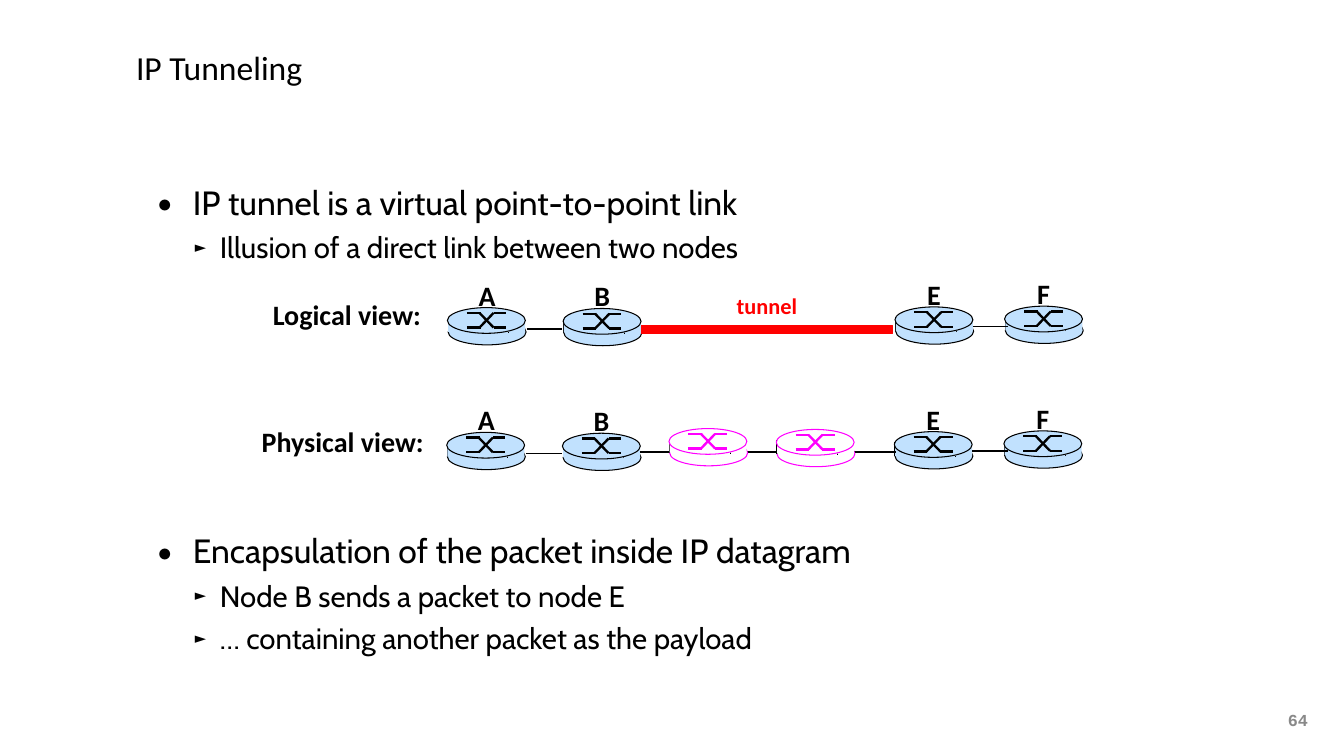
from dataclasses import dataclass
from typing import NamedTuple

from lxml.etree import SubElement
from pptx import Presentation
from pptx.dml.color import RGBColor
from pptx.enum.shapes import MSO_CONNECTOR, MSO_SHAPE
from pptx.enum.text import MSO_ANCHOR, MSO_AUTO_SIZE, PP_ALIGN
from pptx.oxml.ns import qn
from pptx.shapes.shapetree import GroupShapes, SlideShapes
from pptx.slide import Slide
from pptx.text.text import TextFrame, _Paragraph
from pptx.util import Pt

COLOURS = {
    "black": "000000",
    "blue": "C1E1FE",
    "white": "FFFFFF",
    "magenta": "FF00FF",
    "red": "FF0000",
    "grey": "898989",
}
Shapes = SlideShapes | GroupShapes
DISC_WIDTH, DISC_HEIGHT = 74.2, 24.5
ARROWS = (
    (18.5, 5, 31.5, 5),
    (44, 19, 55.5, 19),
    (30.5, 5, 44, 19),
    (18.5, 19, 31.5, 19),
    (44, 5, 55.5, 5),
    (30.5, 19, 44, 5),
)


class Box(NamedTuple):
    left: float
    top: float
    width: float
    height: float


class Link(NamedTuple):
    start: float
    end: float
    y: float


class View(NamedTuple):
    dx: float
    dy: float


@dataclass(frozen=True)
class Router:
    x: float
    y: float
    name: str = ""
    fill: str = "blue"
    outline: str = "black"


@dataclass(frozen=True)
class Bullet:
    text: str
    level: int = 0
    space_before: float = 7


@dataclass(frozen=True)
class BulletStyle:
    size: float
    margin: float
    indent: float
    mark: str
    percent: int


@dataclass(frozen=True)
class Caption:
    text: str
    box: Box
    size: float = 26.7
    colour: str = "black"
    font: str = "Calibri"
    inset: bool = True


BULLET_STYLES = (
    BulletStyle(32, 58.3, -33.1, "•", 150),
    BulletStyle(28, 84.2, -23.8, "►", 50),
)
BULLETS = (
    Bullet("IP tunnel is a virtual point-to-point link"),
    Bullet("Illusion of a direct link between two nodes", 1),
    Bullet("Encapsulation of the packet inside IP datagram", 0, 253),
    Bullet("Node B sends a packet to node E", 1),
    Bullet("… containing another packet as the payload", 1),
)
END_ROUTERS = (
    Router(426.2, 293, "A"),
    Router(536.4, 293.8, "B"),
    Router(852.5, 292.3, "E"),
    Router(956.9, 291.6, "F"),
)
TRANSIT_ROUTERS = (
    Router(637.2, 408.2, fill="white", outline="magenta"),
    Router(739.4, 409, fill="white", outline="magenta"),
)
OUTER_LINKS = (Link(501.8, 535.7, 313.2), Link(926.6, 960.5, 311))
TRANSIT_LINK = Link(609.8, 853.9, 430.6)
VIEWS = (View(0, 0), View(-0.7, 118.8))
TUNNEL = Box(610.6, 310.3, 239.8, 7.2)
CAPTIONS = (
    Caption("tunnel", Box(694.1, 274.3, 72.7, 33.1), 21.3, "red"),
    Caption("Logical view:", Box(252, 279.4, 157, 39.6)),
    Caption("Physical view:", Box(241.2, 400.3, 170.6, 39.6)),
    Caption("64", Box(1219.7, 676.1, 33.1, 36), 16, "grey", "Courier New", False),
)


def rgb(colour: str) -> RGBColor:
    return RGBColor.from_string(COLOURS[colour])


def set_insets(frame: TextFrame, inset: float) -> None:
    frame.margin_left = frame.margin_right = Pt(inset)
    frame.margin_top = frame.margin_bottom = Pt(inset)


def add_run(paragraph: _Paragraph, text: str, font: str, size: float,
            colour: str = "black", bold: bool = False) -> None:
    run = paragraph.add_run()
    run.text = text
    run.font.name = font
    run.font.size = Pt(size)
    run.font.bold = bold
    run.font.color.rgb = rgb(colour)


def add_line(shapes: Shapes, x1: float, y1: float, x2: float, y2: float,
             width: float, colour: str = "black") -> None:
    line = shapes.add_connector(MSO_CONNECTOR.STRAIGHT, Pt(x1), Pt(y1), Pt(x2), Pt(y2))
    line.line.width = Pt(width)
    line.line.color.rgb = rgb(colour)
    SubElement(line._element.spPr, qn("a:effectLst"))


def add_solid(shapes: Shapes, kind: MSO_SHAPE, box: Box, fill: str,
              outline: str = "", width: float = 1) -> None:
    solid = shapes.add_shape(kind, *map(Pt, box))
    solid.shadow.inherit = False
    solid.fill.solid()
    solid.fill.fore_color.rgb = rgb(fill)
    if outline:
        solid.line.color.rgb = rgb(outline)
        solid.line.width = Pt(width)
    else:
        solid.line.fill.background()


def add_caption(shapes: Shapes, caption: Caption) -> None:
    frame = shapes.add_textbox(*map(Pt, caption.box)).text_frame
    frame.word_wrap = False
    frame.auto_size = MSO_AUTO_SIZE.SHAPE_TO_FIT_TEXT
    if not caption.inset:
        set_insets(frame, 0)
    paragraph = frame.paragraphs[0]
    paragraph.alignment = PP_ALIGN.CENTER
    add_run(paragraph, caption.text, caption.font, caption.size, caption.colour, True)


def add_router(slide: Slide, router: Router, view: View = VIEWS[0]) -> None:
    x, y = router.x + view.dx, router.y + view.dy
    parts = slide.shapes.add_group_shape().shapes
    base = Box(x + 0.7, y + 11, DISC_WIDTH, DISC_HEIGHT)
    add_solid(parts, MSO_SHAPE.OVAL, base, router.fill, router.outline)
    add_line(parts, x + 0.7, y + 10, x + 0.7, y + 23, 1)
    add_line(parts, x + 58.3, y + 11, x + 58.3, y + 24, 1)
    add_solid(parts, MSO_SHAPE.RECTANGLE, Box(x + 0.7, y + 10, 73.4, 13), router.fill)
    add_solid(parts, MSO_SHAPE.OVAL, Box(x, y, DISC_WIDTH, DISC_HEIGHT),
              router.fill, router.outline)
    for x1, y1, x2, y2 in ARROWS:
        add_line(parts, x + x1, y + y1, x + x2, y + y2, 2.25, router.outline)
    if router.name:
        label_width = 28.8
        left = x + (DISC_WIDTH - label_width) / 2
        add_caption(parts, Caption(router.name, Box(left, y - 31.7, label_width, 39.6)))


def add_bullet(paragraph: _Paragraph, bullet: Bullet) -> None:
    style = BULLET_STYLES[bullet.level]
    paragraph.level = bullet.level
    paragraph.space_before = Pt(bullet.space_before)
    properties = paragraph._p.get_or_add_pPr()
    properties.set("marL", str(Pt(style.margin)))
    properties.set("indent", str(Pt(style.indent)))
    SubElement(properties, qn("a:buSzPct"), val=str(style.percent * 1000))
    SubElement(properties, qn("a:buFont"), typeface="Cabin")
    SubElement(properties, qn("a:buChar"), char=style.mark)
    add_run(paragraph, bullet.text, "Cabin", style.size)


def fill_placeholders(slide: Slide) -> None:
    title, body = slide.shapes.title, slide.placeholders[1]
    title.left, title.top, title.width, title.height = map(Pt, (125.3, 0, 1030.3, 128.2))
    body.left, body.top, body.width, body.height = map(Pt, (125.3, 172.8, 1030.3, 452.9))
    for frame, inset in ((title.text_frame, 4.3), (body.text_frame, 0)):
        frame.auto_size = MSO_AUTO_SIZE.NONE
        set_insets(frame, inset)
    title.text_frame.vertical_anchor = MSO_ANCHOR.MIDDLE
    heading = title.text_frame.paragraphs[0]
    heading.alignment = PP_ALIGN.LEFT
    add_run(heading, "IP Tunneling", "Calibri", 32)
    for index, bullet in enumerate(BULLETS):
        frame = body.text_frame
        add_bullet(frame.add_paragraph() if index else frame.paragraphs[0], bullet)


def main() -> None:
    presentation = Presentation()
    presentation.slide_width, presentation.slide_height = Pt(1280.16), Pt(720)
    slide = presentation.slides.add_slide(presentation.slide_layouts[1])
    fill_placeholders(slide)
    for view in VIEWS:
        for router in END_ROUTERS:
            add_router(slide, router, view)
        for start, end, y in OUTER_LINKS:
            add_line(slide.shapes, start + view.dx, y + view.dy,
                     end + view.dx, y + view.dy, 1.5)
    add_solid(slide.shapes, MSO_SHAPE.RECTANGLE, TUNNEL, "red", "red", 0.75)
    add_line(slide.shapes, TRANSIT_LINK.start, TRANSIT_LINK.y,
             TRANSIT_LINK.end, TRANSIT_LINK.y, 1.5)
    for router in TRANSIT_ROUTERS:
        add_router(slide, router)
    for caption in CAPTIONS:
        add_caption(slide.shapes, caption)
    presentation.save("out.pptx")


if __name__ == "__main__":
    main()
